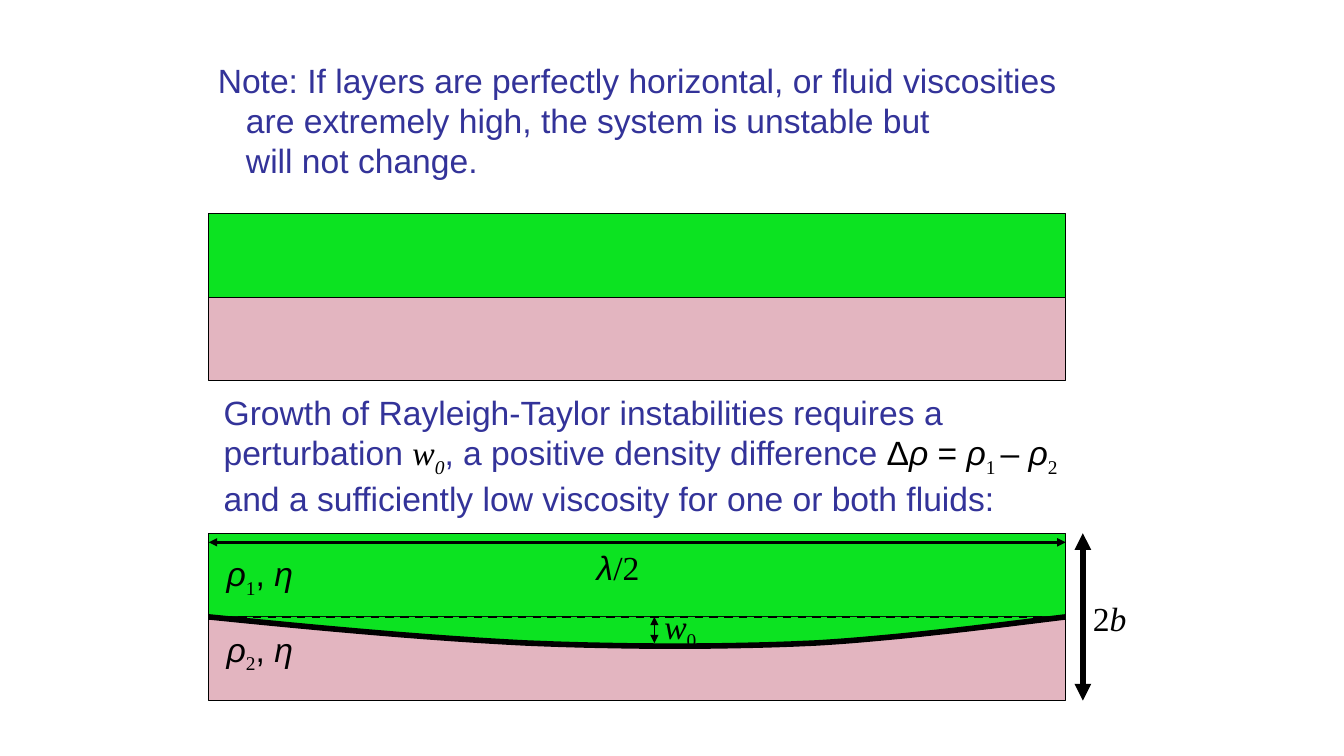
from lxml import etree
from pptx import Presentation
from pptx.dml.color import RGBColor
from pptx.enum.dml import MSO_LINE
from pptx.enum.shapes import MSO_CONNECTOR, MSO_SHAPE
from pptx.enum.text import MSO_ANCHOR, MSO_AUTO_SIZE, PP_ALIGN
from pptx.oxml.ns import qn
from pptx.util import Inches, Pt

NAVY = RGBColor(0x33, 0x33, 0x99)
BLACK = RGBColor(0x00, 0x00, 0x00)
GREEN = RGBColor(0x0C, 0xE3, 0x21)
PINK = RGBColor(0xE3, 0xB5, 0xC0)

LEFT, WIDTH, LAYER_HEIGHT = 2.07, 8.5, 0.83
RIGHT = LEFT + WIDTH
STABLE_TOP, PERTURBED_TOP = 2.12, 5.29
INTERFACE = PERTURBED_TOP + LAYER_HEIGHT
BOTTOM = INTERFACE + LAYER_HEIGHT
SAMPLES = 24
INTERFACE_CURVE = [
    [(LEFT, INTERFACE), (3.15, 6.23), (4.24, 6.33), (5.24, 6.38)],
    [(5.24, 6.38), (6.24, 6.42), (7.18, 6.42), (8.07, 6.38)],
    [(8.07, 6.38), (8.96, 6.33), (10.15, 6.17), (RIGHT, INTERFACE)],
]

STYLES = {
    "prose": {"name": "Arial", "color": NAVY},
    "math": {"name": "Arial", "color": BLACK},
    "symbol": {"name": "Arial", "color": BLACK, "italic": True},
    "serif": {"name": "Times New Roman", "color": BLACK},
    "variable": {"name": "Times New Roman", "color": BLACK, "italic": True},
    "subscript": {"name": "Times New Roman", "color": BLACK, "baseline": -25000},
    "italic subscript": {"name": "Times New Roman", "color": BLACK,
                         "italic": True, "baseline": -25000},
}

NOTE = [
    [("Note: If layers are perfectly horizontal, or fluid viscosities", "prose")],
    [("are extremely high, the system is unstable but", "prose")],
    [("will not change.", "prose")],
]
GROWTH = [
    [("Growth of Rayleigh-Taylor instabilities requires a", "prose")],
    [("perturbation ", "prose"), ("w", "variable"), ("0", "italic subscript"),
     (", a positive density difference ", "prose"), ("Δ", "math"),
     ("ρ", "symbol"), (" = ", "math"), ("ρ", "symbol"), ("1 ", "subscript"),
     ("– ", "math"), ("ρ", "symbol"), ("2", "subscript")],
    [("and a sufficiently low viscosity for one or both fluids:", "prose")],
]


def fluid_label(index):
    return [[("ρ", "symbol"), (index, "subscript"), (", ", "math"), ("η", "symbol")]]


def add_run(paragraph, text, style):
    run = paragraph.add_run()
    run.text = text
    run.font.size = Pt(24)
    for attribute, value in STYLES[style].items():
        if attribute == "color":
            run.font.color.rgb = value
        elif attribute == "baseline":
            run._r.get_or_add_rPr().set("baseline", str(value))
        else:
            setattr(run.font, attribute, value)


def write_text(shape, lines, hanging=0):
    frame = shape.text_frame
    settings = {"word_wrap": False, "auto_size": MSO_AUTO_SIZE.SHAPE_TO_FIT_TEXT,
                "vertical_anchor": MSO_ANCHOR.TOP}
    for attribute, value in settings.items():
        setattr(frame, attribute, value)
    for number, line in enumerate(lines):
        paragraph = frame.add_paragraph() if number else frame.paragraphs[0]
        paragraph.alignment = PP_ALIGN.LEFT
        if number and hanging:
            paragraph._p.get_or_add_pPr().set("marL", str(Inches(hanging)))
        for text, style in line:
            add_run(paragraph, text, style)


def add_text(slide, left, top, width, height, lines):
    box = slide.shapes.add_textbox(*map(Inches, (left, top, width, height)))
    write_text(box, lines)


def add_note(slide):
    title = slide.shapes.title
    place = {"left": 2.06, "top": 0.54, "width": 8.6, "height": 1.31}
    for attribute, value in place.items():
        setattr(title, attribute, Inches(value))
    write_text(title, NOTE, hanging=0.28)


def paint(shape, fill, line_width):
    shape.shadow.inherit = False
    shape.fill.solid()
    shape.fill.fore_color.rgb = fill
    shape.line.color.rgb = BLACK
    shape.line.width = Pt(line_width)


def add_layers(slide, top):
    for row, color in enumerate((GREEN, PINK)):
        layer = slide.shapes.add_shape(
            MSO_SHAPE.RECTANGLE, Inches(LEFT), Inches(top + row * LAYER_HEIGHT),
            Inches(WIDTH), Inches(LAYER_HEIGHT))
        paint(layer, color, 0.75)


def bezier_point(controls, t):
    weights = ((1 - t) ** 3, 3 * t * (1 - t) ** 2, 3 * t ** 2 * (1 - t), t ** 3)
    return tuple(Inches(sum(w * v for w, v in zip(weights, axis)))
                 for axis in zip(*controls))


def add_interface(slide):
    points = [bezier_point(controls, step / SAMPLES)
              for controls in INTERFACE_CURVE for step in range(1, SAMPLES + 1)]
    builder = slide.shapes.build_freeform(Inches(LEFT), Inches(INTERFACE))
    builder.add_line_segments(points, close=False)
    paint(builder.convert_to_shape(), GREEN, 4)


def add_line(slide, start, end, width, arrows=True):
    connector = slide.shapes.add_connector(
        MSO_CONNECTOR.STRAIGHT, *map(Inches, start + end))
    connector.line.color.rgb = BLACK
    connector.line.width = Pt(width)
    properties = connector._element.spPr
    if arrows:
        outline = properties.find(qn("a:ln"))
        for tag in ("a:headEnd", "a:tailEnd"):
            etree.SubElement(outline, qn(tag), type="triangle")
    else:
        connector.line.dash_style = MSO_LINE.DASH
    etree.SubElement(properties, qn("a:effectLst"))


def main():
    presentation = Presentation()
    presentation.slide_width = Inches(13.33)
    presentation.slide_height = Inches(7.5)
    slide = presentation.slides.add_slide(presentation.slide_layouts[5])

    add_note(slide)
    add_layers(slide, STABLE_TOP)
    add_text(slide, 2.12, 3.84, 8.56, 1.31, GROWTH)

    add_layers(slide, PERTURBED_TOP)
    add_interface(slide)
    add_line(slide, (LEFT, INTERFACE), (RIGHT, INTERFACE), 1.5, arrows=False)
    add_text(slide, 6.49, 5.96, 0.53, 0.5, [[("w", "variable"), ("0", "subscript")]])
    add_line(slide, (6.49, INTERFACE), (6.49, 6.38), 0.75)
    for index, top in (("1", 5.44), ("2", 6.19)):
        add_text(slide, 2.15, top, 0.88, 0.5, fluid_label(index))
    add_line(slide, (LEFT, 5.38), (RIGHT, 5.38), 2)
    add_text(slide, 5.82, 5.38, 0.64, 0.5, [[("λ", "symbol"), ("/2", "serif")]])
    add_line(slide, (10.74, PERTURBED_TOP), (10.74, BOTTOM), 4)
    add_text(slide, 10.74, 5.88, 0.53, 0.5, [[("2", "serif"), ("b", "variable")]])

    presentation.save("out.pptx")


if __name__ == "__main__":
    main()
